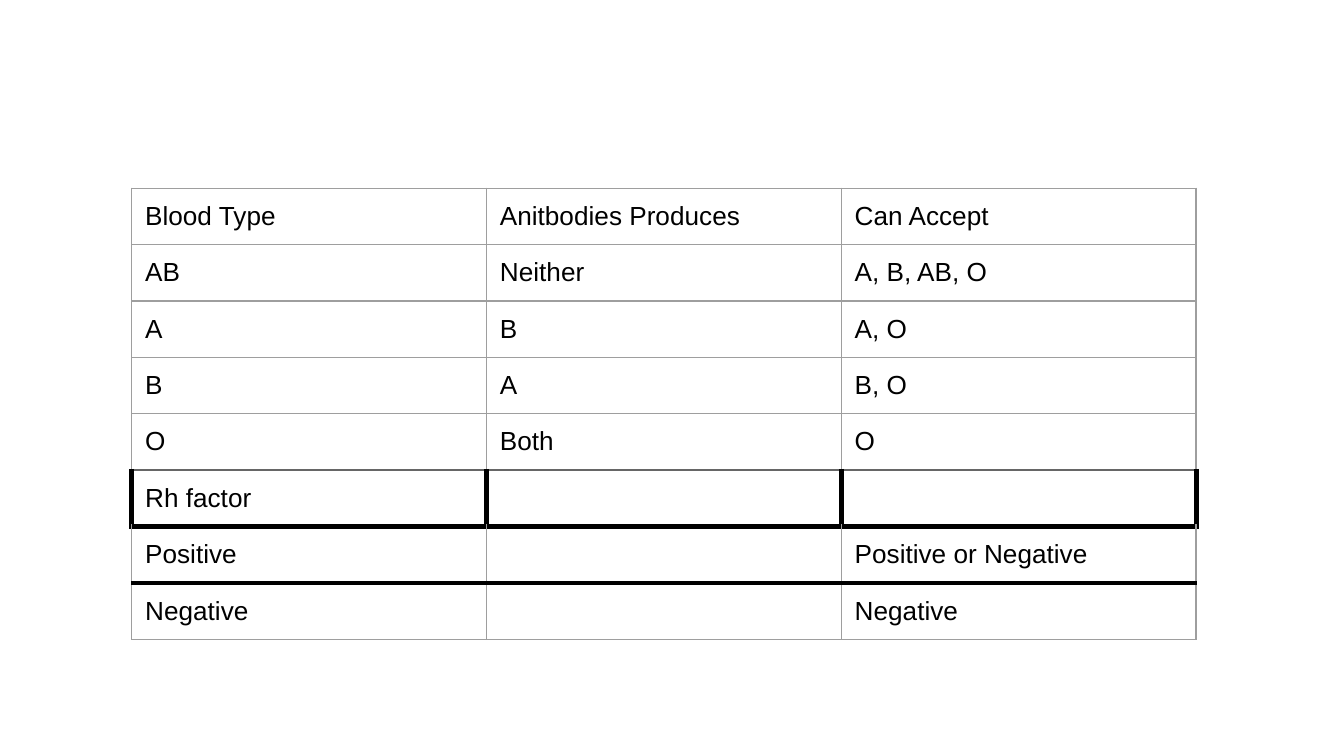
from lxml import etree
from pptx import Presentation
from pptx.dml.color import RGBColor
from pptx.oxml.ns import qn
from pptx.util import Inches, Pt

BLACK = RGBColor(0, 0, 0)
DARK = RGBColor(0x66, 0x66, 0x66)
GRAY = RGBColor(0x9E, 0x9E, 0x9E)

ROWS = [
    ("Blood Type", "Anitbodies Produces", "Can Accept"),
    ("AB", "Neither", "A, B, AB, O"),
    ("A", "B", "A, O"),
    ("B", "A", "B, O"),
    ("O", "Both", "O"),
    ("Rh factor", "", ""),
    ("Positive", "", "Positive or Negative"),
    ("Negative", "", "Negative"),
]
THIN, MID, THICK = (GRAY, 0.75), (DARK, 1.5), (BLACK, 3)
RH = 5
RULES = {RH: MID, RH + 1: THICK, RH + 2: THICK}
LEFT, TOP, WIDE, HIGH = 0.98, 1.4, 2.64, 0.42
PAD = Inches(0.1)


def add_edge(cell, side, line):
    color, width = line
    props = cell._tc.get_or_add_tcPr()
    edge = etree.SubElement(props, qn("a:" + side), w=str(Pt(width)))
    fill = etree.SubElement(edge, qn("a:solidFill"))
    etree.SubElement(fill, qn("a:srgbClr"), val=str(color))


def fill_cell(cell, text, row):
    side = THICK if row == RH else THIN
    add_edge(cell, "lnL", side)
    add_edge(cell, "lnR", side)
    add_edge(cell, "lnT", RULES.get(row, THIN))
    add_edge(cell, "lnB", RULES.get(row + 1, THIN))
    cell.fill.background()
    if text:
        cell.text = text
        cell.margin_left = cell.margin_right = PAD
        cell.margin_top = cell.margin_bottom = PAD
        font = cell.text_frame.paragraphs[0].font
        font.name, font.size = "Arial", Pt(14)
        font.color.rgb = BLACK


deck = Presentation()
deck.slide_width = Inches(10)
deck.slide_height = deck.slide_width * 9 // 16
slide = deck.slides.add_slide(deck.slide_layouts[6])

count = len(ROWS[0])
table = slide.shapes.add_table(
    len(ROWS), count, Inches(LEFT), Inches(TOP),
    Inches(WIDE * count), Inches(HIGH * len(ROWS))).table
table.first_row = table.horz_banding = False
for r, texts in enumerate(ROWS):
    for c, text in enumerate(texts):
        fill_cell(table.cell(r, c), text, r)

deck.save("out.pptx")
